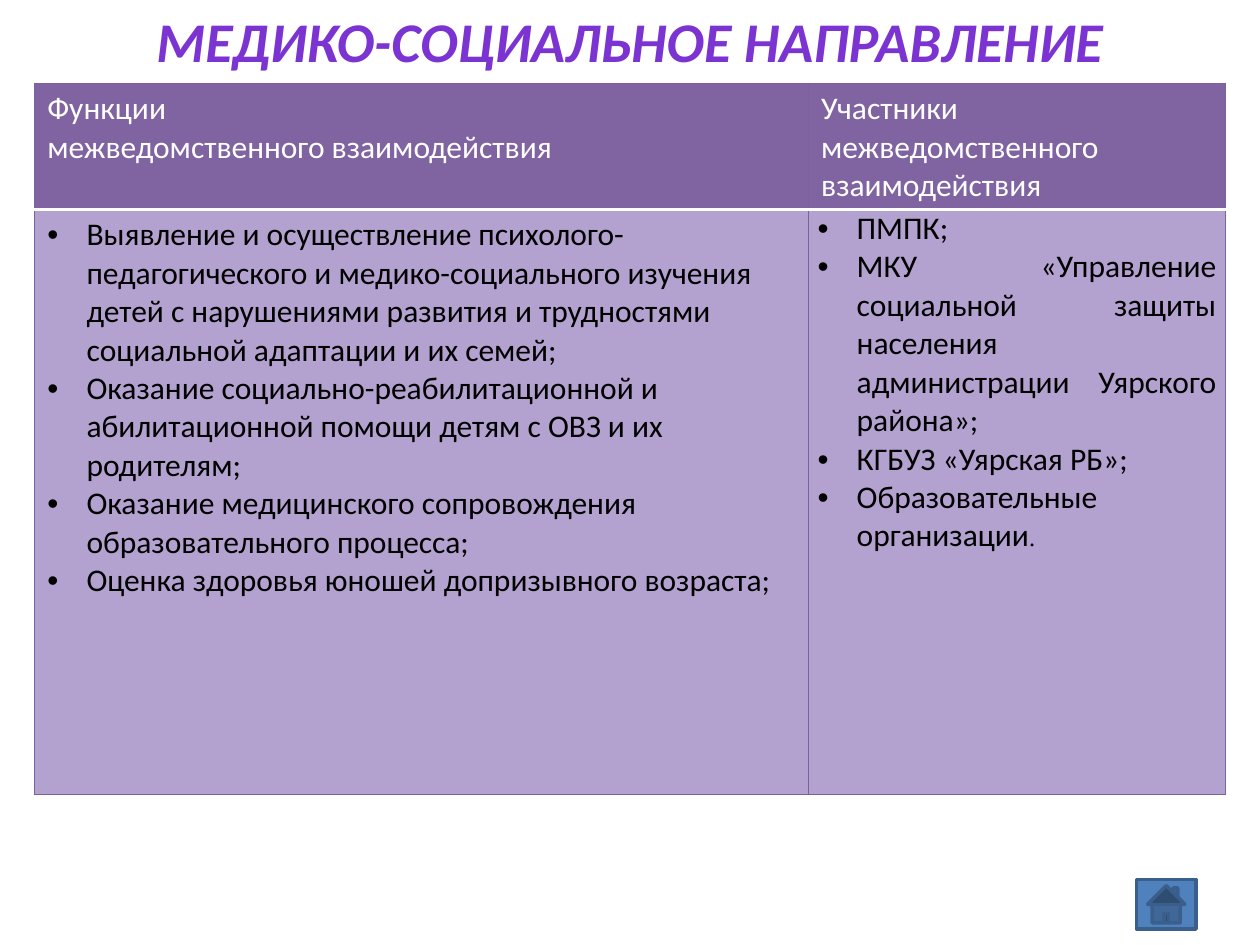
from lxml import etree
from pptx import Presentation
from pptx.dml.color import RGBColor
from pptx.enum.shapes import MSO_SHAPE
from pptx.enum.text import MSO_ANCHOR, MSO_AUTO_SIZE, PP_ALIGN
from pptx.oxml.ns import qn
from pptx.util import Cm, Pt

HOME_BUTTON = MSO_SHAPE.ACTION_BUTTON_HOME
CENTER, JUSTIFY = PP_ALIGN.CENTER, PP_ALIGN.JUSTIFY
MIDDLE = MSO_ANCHOR.MIDDLE
FIT_SHAPE = MSO_AUTO_SIZE.SHAPE_TO_FIT_TEXT

WHITE = RGBColor(0xFF, 0xFF, 0xFF)
BLACK = RGBColor(0x00, 0x00, 0x00)
VIOLET = RGBColor(0x7B, 0x34, 0xD2)
HEADER_PURPLE = RGBColor(0x80, 0x64, 0xA2)
BODY_PURPLE = RGBColor(0xB3, 0xA2, 0xCF)
BORDER_PURPLE = RGBColor(0x7D, 0x60, 0xA0)
BUTTON_BLUE = RGBColor(0x4F, 0x81, 0xBD)
BUTTON_EDGE = RGBColor(0x3A, 0x5F, 0x8C)

FONT = "Calibri"
BULLET_INDENT = Cm(0.79)
THIN = (BORDER_PURPLE, Pt(0.75))
DIVIDER = (WHITE, Pt(2))

TITLE = "МЕДИКО-СОЦИАЛЬНОЕ НАПРАВЛЕНИЕ"
HEADERS = [
    ["Функции", "межведомственного взаимодействия"],
    ["Участники", "межведомственного взаимодействия"],
]
FUNCTIONS = [
    "Выявление и осуществление психолого-педагогического и медико-социального "
    "изучения детей с нарушениями развития и трудностями социальной адаптации "
    "и их семей;",
    "Оказание социально-реабилитационной и абилитационной помощи детям с ОВЗ "
    "и их родителям;",
    "Оказание медицинского сопровождения образовательного процесса;",
    "Оценка здоровья юношей допризывного возраста;",
]
PARTICIPANTS = [
    "ПМПК;",
    "МКУ «Управление социальной защиты населения администрации Уярского района»;",
    "КГБУЗ «Уярская РБ»;",
    "Образовательные организации",
]


def set_format(target, values):
    for name, value in values.items():
        setattr(target, name, value)


def add_span(para, text, color, **values):
    span = para.add_run()
    span.text = text
    set_format(span.font, {"name": FONT, "size": Pt(18), **values})
    span.font.color.rgb = color
    return span


def add_bullet(para):
    properties = para._p.get_or_add_pPr()
    properties.set("marL", str(BULLET_INDENT))
    properties.set("indent", str(-BULLET_INDENT))
    etree.SubElement(properties, qn("a:buFont"), typeface="Arial")
    etree.SubElement(properties, qn("a:buChar"), char="•")


def add_borders(cell, **sides):
    """Draw cell edges; call before filling, as the schema puts lines first."""
    properties = cell._tc.get_or_add_tcPr()
    for side in "LRTB":
        color, width = sides.get(side, THIN)
        line = etree.SubElement(properties, qn(f"a:ln{side}"), w=str(width))
        fill = etree.SubElement(line, qn("a:solidFill"))
        etree.SubElement(fill, qn("a:srgbClr"), val=str(color))


def fill_cell(cell, lines, fill, color, bullets=False, align=None):
    cell.fill.solid()
    cell.fill.fore_color.rgb = fill
    frame = cell.text_frame
    for index, text in enumerate(lines):
        para = frame.add_paragraph() if index else frame.paragraphs[0]
        para.alignment = align
        if bullets:
            add_bullet(para)
        add_span(para, text, color)


def place_title(page, left, top, width, height):
    box = page.shapes.title
    set_format(box, {"left": left, "top": top, "width": width, "height": height})
    set_format(box.text_frame, {"word_wrap": False, "auto_size": FIT_SHAPE,
                                "vertical_anchor": MIDDLE})
    para = box.text_frame.paragraphs[0]
    para.alignment = CENTER
    add_span(para, TITLE, VIOLET, size=Pt(32), bold=True, italic=True)


def place_table(page, left, top, width, height):
    table = page.shapes.add_table(2, 2, left, top, width, height).table
    set_format(table, {"first_row": False, "horz_banding": False})
    header_height, functions_width = Cm(2.54), Cm(15.6)
    table.columns[0].width = functions_width
    table.columns[1].width = width - functions_width
    table.rows[0].height = header_height
    table.rows[1].height = height - header_height

    for column, lines in enumerate(HEADERS):
        header, body = table.cell(0, column), table.cell(1, column)
        add_borders(header, B=DIVIDER)
        add_borders(body, T=DIVIDER)
        fill_cell(header, lines, HEADER_PURPLE, WHITE)

    fill_cell(table.cell(1, 0), FUNCTIONS, BODY_PURPLE, BLACK, bullets=True)
    participants = table.cell(1, 1)
    set_format(participants, {"margin_left": Cm(0.18), "margin_right": Cm(0.18),
                              "margin_top": 0, "margin_bottom": 0})
    fill_cell(participants, PARTICIPANTS, BODY_PURPLE, BLACK, True, JUSTIFY)
    add_span(participants.text_frame.paragraphs[-1], ".", BLACK,
             name="Times New Roman", size=Pt(14))


def place_home_button(page, left, top, width, height):
    button = page.shapes.add_shape(HOME_BUTTON, left, top, width, height)
    button.shadow.inherit = False
    button.fill.solid()
    button.fill.fore_color.rgb = BUTTON_BLUE
    button.line.color.rgb = BUTTON_EDGE
    button.line.width = Pt(2)


def main():
    deck = Presentation()
    deck.slide_width, deck.slide_height = Cm(25.4), Cm(19.05)
    page = deck.slides.add_slide(deck.slide_layouts[5])
    place_title(page, Cm(2.81), 0, Cm(19.78), Cm(1.62))
    place_table(page, Cm(0.7), Cm(1.68), Cm(24), Cm(14.33))
    place_home_button(page, Cm(22.91), Cm(17.73), Cm(1.2), Cm(1))
    deck.save("out.pptx")


if __name__ == "__main__":
    main()
